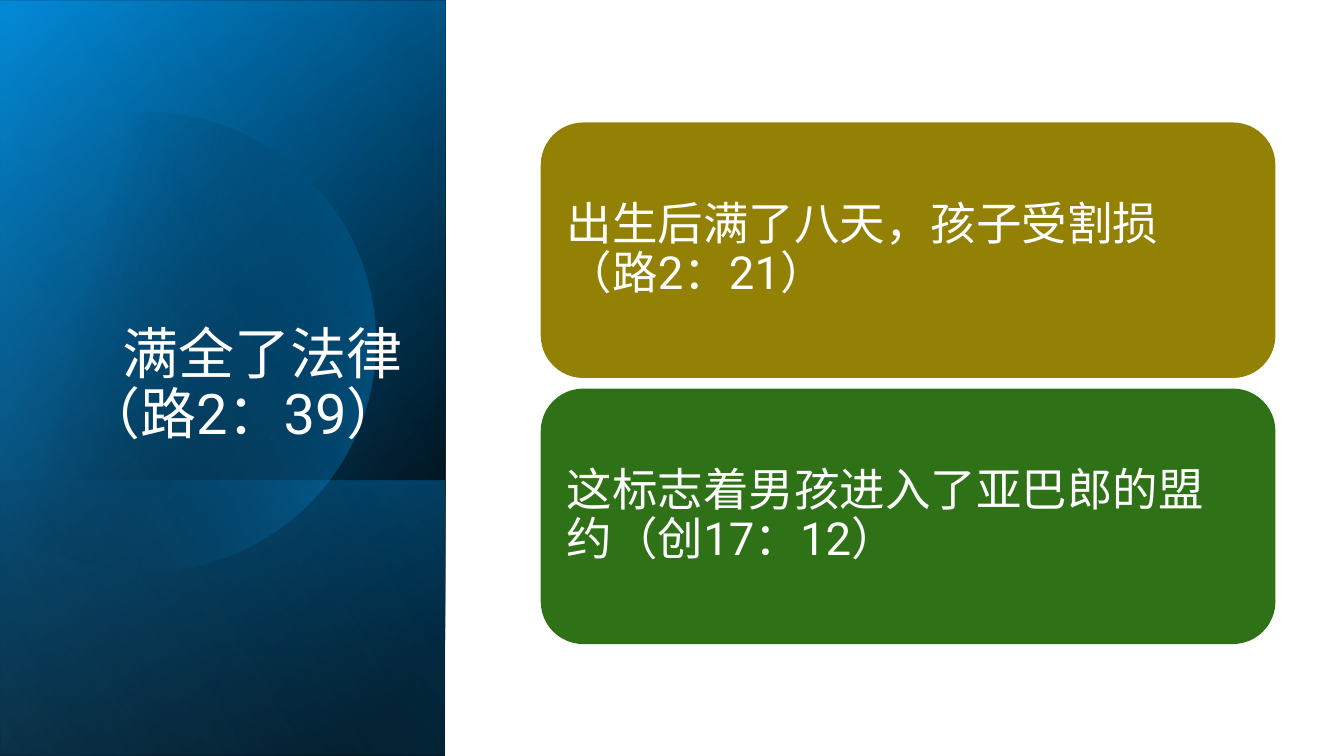
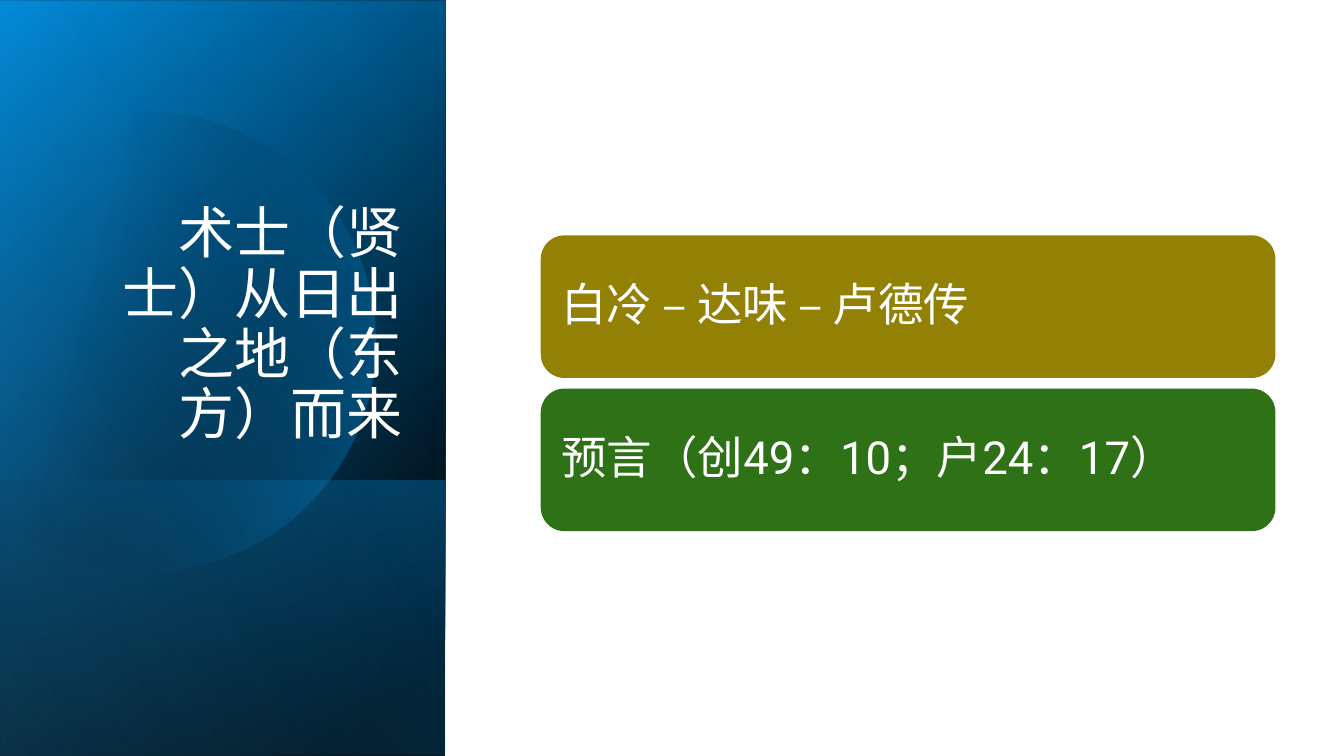
from dataclasses import dataclass
from typing import NamedTuple

import pptx
import pptx.dml.color
import pptx.enum.shapes
import pptx.enum.text
import pptx.oxml
import pptx.oxml.ns
import pptx.util
from pptx.util import Inches


@dataclass(frozen=True)
class Theme:
    font: str = "Roboto"
    title_size: int = 80
    card_size: int = 65
    text: str = "FFFFFF"
    black: str = "000000"
    deep_blue: str = "0079BF"
    blue: str = "00A2FF"
    pale_blue: str = "66C7FF"
    cards: tuple[str, ...] = ("928104", "2E7116")


class Stop(NamedTuple):
    position: int
    color: str
    opacity: int = 100


class Box(NamedTuple):
    left: float
    top: float
    width: float
    height: float

    def lengths(self) -> list[pptx.util.Length]:
        return [Inches(value) for value in self]


class Band(NamedTuple):
    box: Box
    angle: int
    stops: tuple[Stop, Stop]


class Page(NamedTuple):
    title: str
    card_height: float
    cards: tuple[str, ...]


class Point(NamedTuple):
    x: float
    y: float


THEME = Theme()
TITLE_BOX = Box(1.28, 3.68, 6.81, 5.24)
CARD_LEFT, CARD_WIDTH = 10.73, 14.58
FIRST_CARD_BOTTOM, CARD_GAP = 7.5, 0.21
CARD_INSET = 0.27

# Side panel: gradient bands turned a quarter, with a disc under the last one
PANEL = Box(-3.08, 3.08, 15, 8.83)
BANDS_BELOW_DISC = (
    Band(PANEL, 50, (Stop(8, THEME.black), Stop(100, THEME.deep_blue))),
    Band(PANEL._replace(top=3.11), 30, (Stop(0, THEME.black, 0), Stop(99, THEME.blue, 46))),
    Band(Box(1.68, 7.85, 5.47, 8.83), 130,
         (Stop(2, THEME.blue, 29), Stop(100, THEME.black, 30))),
)
BAND_ABOVE_DISC = Band(PANEL, 120, (Stop(0, THEME.black, 0), Stop(99, THEME.pale_blue, 11)))

# Disc outline: one point is a line, three points are a Bézier curve
DISC_START = Point(2.97, 2.21)
DISC_SEGMENTS = (
    (Point(4.92, 2.25), Point(6.7, 3.54), Point(7.27, 5.51)),
    (Point(7.97, 7.94), Point(6.57, 10.47), Point(4.14, 11.17)),
    (Point(2.63, 11.6), Point(1.07, 11.22), Point(-0.06, 10.28)),
    (Point(-0.3, 10.06),),
    (Point(-0.3, 3.49),),
    (Point(0, 3.22),),
    (Point(0.46, 2.85), Point(1, 2.56), Point(1.61, 2.38)),
    (Point(2.06, 2.25), Point(2.52, 2.2), DISC_START),
)
DISC_ANGLE = 14
DISC_STOPS = (Stop(29, THEME.black, 0), Stop(100, THEME.blue, 43))
CURVE_STEPS = 24

PAGES = (
    Page("满全了法律（路2：39）", 5.07,
         ("出生后满了八天，孩子受割损（路2：21）",
          "这标志着男孩进入了亚巴郎的盟约（创17：12）")),
    Page("术士（贤士）从日出之地（东方）而来", 2.83,
         ("白冷 – 达味 – 卢德传", "预言（创49：10；户24：17）")),
)


def rgb(color: str) -> pptx.dml.color.RGBColor:
    return pptx.dml.color.RGBColor.from_string(color)


def clear_effects(sp) -> None:
    sp.shadow.inherit = False
    sp.line.fill.background()


def fill_gradient(sp, stops: tuple[Stop, ...], angle: int) -> None:
    """Fill with a linear gradient whose stops can be transparent."""
    clear_effects(sp)
    sp.fill.gradient()
    grad = sp.fill._fill._gradFill
    for child in list(grad):
        grad.remove(child)
    marks = "".join(
        f'<a:gs pos="{stop.position * 1000}"><a:srgbClr val="{stop.color}">'
        f'<a:alpha val="{stop.opacity * 1000}"/></a:srgbClr></a:gs>'
        for stop in stops)
    ns = pptx.oxml.ns.nsdecls("a")
    grad.append(pptx.oxml.parse_xml(f"<a:gsLst {ns}>{marks}</a:gsLst>"))
    grad.append(pptx.oxml.parse_xml(f'<a:lin {ns} ang="{angle * 60000}" scaled="0"/>'))
    grad.set("rotWithShape", "1")


def add_band(slide, band: Band) -> None:
    sp = slide.shapes.add_shape(
        pptx.enum.shapes.MSO_SHAPE.RECTANGLE, *band.box.lengths())
    sp.rotation = 90
    sp._element.spPr.xfrm.set("flipH", "1")
    fill_gradient(sp, band.stops, band.angle)


def curve_point(points: tuple[Point, ...], t: float) -> Point:
    """Point at t on a Bézier curve, by repeated interpolation."""
    while len(points) > 1:
        points = tuple(Point(a.x + (b.x - a.x) * t, a.y + (b.y - a.y) * t)
                       for a, b in zip(points, points[1:]))
    return points[0]


def add_disc(slide) -> None:
    outline = [DISC_START]
    for segment in DISC_SEGMENTS:
        controls = (outline[-1], *segment)
        steps = CURVE_STEPS if len(segment) > 1 else 1
        outline += [curve_point(controls, i / steps) for i in range(1, steps + 1)]
    start, *rest = [(Inches(point.x), Inches(point.y)) for point in outline]
    builder = slide.shapes.build_freeform(*start)
    builder.add_line_segments(rest, close=True)
    fill_gradient(builder.convert_to_shape(), DISC_STOPS, DISC_ANGLE)


def add_panel(slide) -> None:
    for band in BANDS_BELOW_DISC:
        add_band(slide, band)
    add_disc(slide)
    add_band(slide, BAND_ABOVE_DISC)


def write_text(tf, text: str, size: int, align, anchor):
    tf.word_wrap = True
    tf.auto_size = pptx.enum.text.MSO_AUTO_SIZE.NONE
    tf.vertical_anchor = anchor
    p = tf.paragraphs[0]
    p.alignment = align
    p.line_spacing = 0.9
    r = p.add_run()
    r.text = text
    r.font.name = THEME.font
    r.font.size = pptx.util.Pt(size)
    r.font.color.rgb = rgb(THEME.text)
    return p


def place_title(slide, text: str) -> None:
    sp = slide.shapes.title
    sp.left, sp.top, sp.width, sp.height = TITLE_BOX.lengths()
    write_text(sp.text_frame, text, THEME.title_size,
               pptx.enum.text.PP_ALIGN.RIGHT, pptx.enum.text.MSO_ANCHOR.BOTTOM)
    # Bring the title in front of the panel
    slide.shapes._spTree.append(sp._element)


def add_card(slide, box: Box, color: str, text: str) -> None:
    sp = slide.shapes.add_shape(
        pptx.enum.shapes.MSO_SHAPE.ROUNDED_RECTANGLE, *box.lengths())
    clear_effects(sp)
    sp.fill.solid()
    sp.fill.fore_color.rgb = rgb(color)
    tf = sp.text_frame
    tf.margin_left = tf.margin_right = Inches(CARD_INSET)
    tf.margin_top = tf.margin_bottom = Inches(CARD_INSET)
    p = write_text(tf, text, THEME.card_size,
                   pptx.enum.text.PP_ALIGN.LEFT, pptx.enum.text.MSO_ANCHOR.MIDDLE)
    p.space_after = pptx.util.Pt(23)


def add_page(prs, page: Page) -> None:
    slide = prs.slides.add_slide(prs.slide_layouts.get_by_name("Title Only"))
    add_panel(slide)
    place_title(slide, page.title)
    # Cards of equal height, stacked from the fixed lower edge of the first
    first_top = FIRST_CARD_BOTTOM - page.card_height
    for i, (color, text) in enumerate(zip(THEME.cards, page.cards)):
        top = first_top + i * (page.card_height + CARD_GAP)
        add_card(slide, Box(CARD_LEFT, top, CARD_WIDTH, page.card_height), color, text)


def main() -> None:
    prs = pptx.Presentation()
    prs.slide_width, prs.slide_height = Inches(26.67), Inches(15)
    for page in PAGES:
        add_page(prs, page)
    prs.save("out.pptx")


if __name__ == "__main__":
    main()
